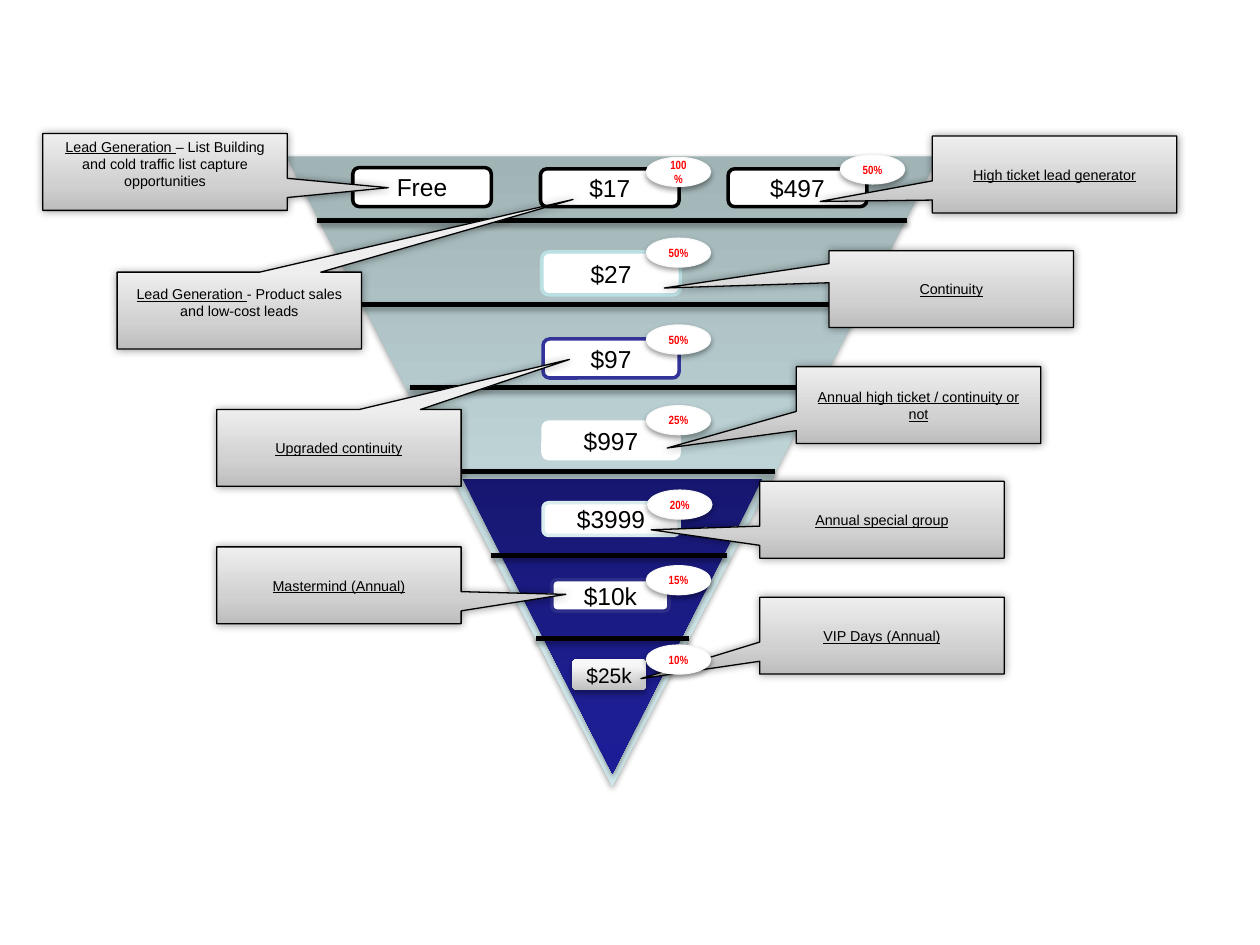
from lxml import etree
from pptx import Presentation
from pptx.dml.color import RGBColor
from pptx.enum.shapes import MSO_CONNECTOR, MSO_SHAPE
from pptx.enum.text import MSO_ANCHOR, PP_ALIGN
from pptx.oxml.ns import qn
from pptx.util import Inches, Pt

TRIANGLE = MSO_SHAPE.ISOSCELES_TRIANGLE
PILL = MSO_SHAPE.ROUNDED_RECTANGLE
CALLOUT = MSO_SHAPE.RECTANGULAR_CALLOUT
OVAL = MSO_SHAPE.OVAL
STRAIGHT = MSO_CONNECTOR.STRAIGHT
MIDDLE = MSO_ANCHOR.MIDDLE
CENTER = PP_ALIGN.CENTER

SLIDE_WIDTH, SLIDE_HEIGHT = Inches(10), Inches(7.5)
COLUMN, ROW = SLIDE_WIDTH // 1000, SLIDE_HEIGHT // 750

COLORS = {
    "black": "000000", "white": "FFFFFF", "red": "FF0000", "rim": "F9F9F9",
    "indigo": "333399", "navy": "2D2D8A", "teal": "BBE0E3", "ice": "DAEDEF",
}
GRADIENTS = {
    "funnel": [(0, "A0B3B5"), (80, "D0E8EB"), (100, "D1EAEC")],
    "core": [(0, "171771"), (80, "1E1E93"), (100, "1C1C96")],
    "button": [(0, "BEBEBE"), (80, "F7F7F7"), (100, "F8F8F8")],
    "callout": [(0, "BDBDBD"), (35, "D1D1D1"), (100, "EEEEEE")],
}
DROP = {"alpha": 35, "blur": 3.1, "dist": 1.8}
BADGE_DROP = {"alpha": 38, "blur": 3.1, "dist": 1.6}
GLOW = {"alpha": 40, "blur": 5, "dist": 0}

PRICE_FONT = {"name": "Arial", "size": Pt(14)}
BUTTON_FONT = {"name": "Arial", "size": Pt(12)}
NOTE_FONT = {"name": "Arial", "size": Pt(8.2)}
BADGE_FONT = {"name": "Arial Narrow", "size": Pt(6.8), "bold": True}

FUNNELS = [((227, 124, 518, 500), "funnel"), ((367, 380, 238, 234), "core")]
PRICES = [
    ("Free", (280, 133, 110, 31), "black"),
    ("$17", (429, 134, 110, 30), "black"),
    ("$497", (578, 134, 110, 30), "black"),
    ("$27", (430, 200, 110, 34), "teal"),
    ("$97", (431, 269, 108, 31), "indigo"),
    ("$997", (431, 335, 108, 29), "white"),
    ("$3999", (431, 399, 108, 26), "ice"),
    ("$10k", (438, 460, 93, 25), "navy"),
]
DIVIDER_TOP, DIVIDER_STEP = 175, 66.4
DIVIDERS = [(252, 720), (286, 689), (325, 650), (357, 615), (390, 577), (425, 547)]
CALLOUTS = [
    ((603, 474), (-0.986, 0.559), "VIP Days (Annual)", ""),
    ((172, 434), (0.928, 0.119), "Mastermind (Annual)", ""),
    ((603, 382), (-0.944, 0.131), "Annual special group", ""),
    ((632, 291), (-1.028, 0.559), "Annual high ticket / continuity or not", ""),
    ((172, 325), (0.943, -1.152), "Upgraded continuity", ""),
    ((658, 199), (-1.174, -0.015), "Continuity", ""),
    ((740, 108), (-0.959, 0.351), "High ticket lead generator", ""),
    ((93, 216), (1.365, -1.446), "Lead Generation ",
     "- Product sales and low-cost leads"),
    ((34, 106), (0.913, 0.205), "Lead Generation ",
     "– List Building and cold traffic list capture opportunities"),
]
CALLOUT_SIZE = (194, 61)
BADGES = [
    ("100%", 513, 125), ("50%", 667, 123), ("50%", 513, 189), ("50%", 513, 258),
    ("25%", 513, 322), ("20%", 514, 389), ("15%", 513, 449), ("10%", 513, 512),
]
BADGE_SIZE = (51, 23)


def color(name):
    return RGBColor.from_string(COLORS[name])


def add_color(parent, value):
    return etree.SubElement(parent, qn("a:srgbClr"), val=value)


def set_shadow(item, shadow):
    effects = etree.SubElement(item.element.spPr, qn("a:effectLst"))
    if shadow:
        outer = etree.SubElement(
            effects, qn("a:outerShdw"), blurRad=str(Pt(shadow["blur"])),
            dist=str(Pt(shadow["dist"])), dir="5400000", rotWithShape="0")
        tint = add_color(outer, COLORS["black"])
        etree.SubElement(tint, qn("a:alpha"), val=str(shadow["alpha"] * 1000))


def set_gradient(shape, name):
    shape.fill.gradient()
    shape.fill.gradient_angle = 90
    stops = shape.element.spPr.find(qn("a:gradFill")).find(qn("a:gsLst"))
    for stop in list(stops):
        stops.remove(stop)
    for position, value in GRADIENTS[name]:
        add_color(etree.SubElement(stops, qn("a:gs"), pos=str(position * 1000)), value)


def add_box(page, kind, area, fill, line=None, weight=0, shadow=None):
    left, top, width, height = area
    box = page.shapes.add_shape(
        kind, left * COLUMN, top * ROW, width * COLUMN, height * ROW)
    if fill in GRADIENTS:
        set_gradient(box, fill)
    else:
        box.fill.solid()
        box.fill.fore_color.rgb = color(fill)
    if line:
        box.line.color.rgb = color(line)
        box.line.width = Pt(weight)
    else:
        box.line.fill.background()
    set_shadow(box, shadow)
    return box


def write(box, spans, font, ink="black", wrap=True):
    frame = box.text_frame
    frame.word_wrap = wrap
    frame.vertical_anchor = MIDDLE
    para = frame.paragraphs[0]
    para.alignment = CENTER
    for text, extra in spans:
        span = para.add_run()
        span.text = text
        span.font.color.rgb = color(ink)
        for key, value in {**font, **extra}.items():
            setattr(span.font, key, value)


def add_funnel(page, area, fill):
    add_box(page, TRIANGLE, area, fill, shadow=DROP).rotation = 180


def add_price(page, text, area, line):
    box = add_box(page, PILL, area, "white", line, 2)
    write(box, [(text, {})], PRICE_FONT, wrap=False)


def add_button(page, text, area):
    box = add_box(page, PILL, area, "button", shadow=DROP)
    write(box, [(text, {})], BUTTON_FONT, wrap=False)


def add_divider(page, index, start, end):
    level = round((DIVIDER_TOP + index * DIVIDER_STEP) * ROW)
    divider = page.shapes.add_connector(
        STRAIGHT, start * COLUMN, level, end * COLUMN, level)
    divider.line.color.rgb = color("black")
    divider.line.width = Pt(3)
    set_shadow(divider, DROP)


def add_callout(page, corner, pointer, title, detail):
    box = add_box(page, CALLOUT, corner + CALLOUT_SIZE, "callout", "black", 0.75, GLOW)
    for index, value in enumerate(pointer):
        box.adjustments[index] = value
    spans = [(title, {"underline": True})]
    if detail:
        spans.append((detail, {"underline": False}))
        box.text_frame.margin_bottom = Inches(0.18)
    write(box, spans, NOTE_FONT)


def add_badge(page, text, left, top):
    box = add_box(page, OVAL, (left, top) + BADGE_SIZE, "white", "rim", 0.75, BADGE_DROP)
    write(box, [(text, {})], BADGE_FONT, "red")


def main():
    deck = Presentation()
    deck.slide_width, deck.slide_height = SLIDE_WIDTH, SLIDE_HEIGHT
    page = deck.slides.add_slide(deck.slide_layouts[6])
    for funnel in FUNNELS:
        add_funnel(page, *funnel)
    for price in PRICES:
        add_price(page, *price)
    add_button(page, "$25k", (454, 523, 59, 25))
    for index, (start, end) in enumerate(DIVIDERS):
        add_divider(page, index, start, end)
    for callout in CALLOUTS:
        add_callout(page, *callout)
    for badge in BADGES:
        add_badge(page, *badge)
    deck.save("out.pptx")


if __name__ == "__main__":
    main()
